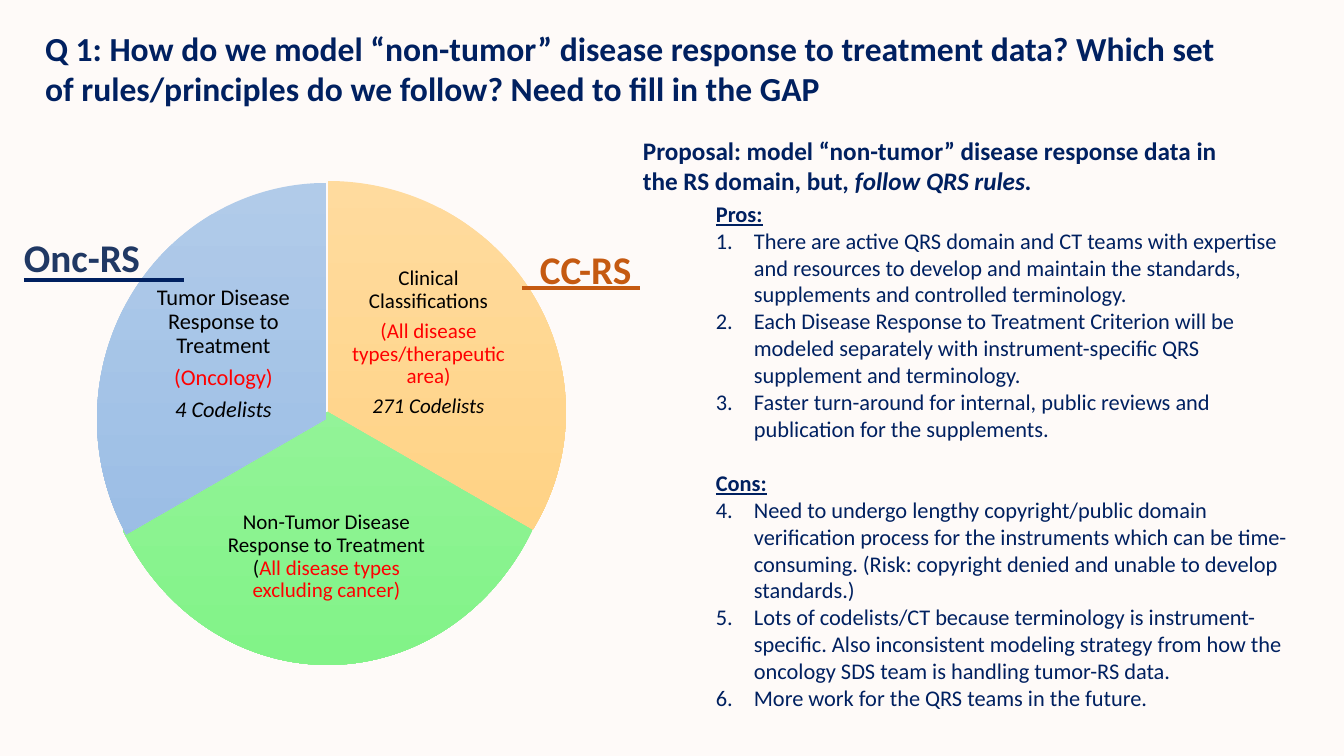
"""Build a slide on modelling non-tumor disease response data."""
from lxml import etree
from pptx import Presentation
from pptx.dml.color import RGBColor
from pptx.enum.shapes import MSO_CONNECTOR, MSO_SHAPE
from pptx.enum.text import MSO_ANCHOR, MSO_AUTO_SIZE, PP_ALIGN
from pptx.oxml.ns import qn
from pptx.util import Pt

PIE = MSO_SHAPE.PIE
LINE = MSO_CONNECTOR.STRAIGHT
TOP, MIDDLE = MSO_ANCHOR.TOP, MSO_ANCHOR.MIDDLE
LEFT, CENTER = PP_ALIGN.LEFT, PP_ALIGN.CENTER
FIXED = MSO_AUTO_SIZE.NONE
SCALE = 12192000 / 1344
FONT = "Calibri"
NAVY, BLACK, RED = "002060", "000000", "FF0000"

PROS = [
    "There are active QRS domain and CT teams with expertise and resources to "
    "develop and maintain the standards, supplements and controlled terminology.",
    "Each Disease Response to Treatment Criterion will be modeled separately "
    "with instrument-specific QRS supplement and terminology.",
    "Faster turn-around for internal, public reviews and publication for the "
    "supplements.",
]
CONS = [
    "Need to undergo lengthy copyright/public domain verification process for "
    "the instruments which can be time-consuming. (Risk: copyright denied and "
    "unable to develop standards.)",
    "Lots of codelists/CT because terminology is instrument-specific. Also "
    "inconsistent modeling strategy from how the oncology SDS team is handling "
    "tumor-RS data.",
    "More work for the QRS teams in the future.",
]
SLICES = [
    ((90, 181, 476, 462), (162, 18), ("FFDB9E", "FFD07C"), (348, 266, 161, 154), 15,
     [[("Clinical Classifications", BLACK, "")],
      [("(All disease types/therapeutic area)", RED, "")],
      [("271 Codelists", BLACK, "i")]]),
    ((96, 159, 463, 506), (18, 90), ("A4F4A9", "82F388"), (222, 479, 209, 156), 15,
     [[("Non-Tumor Disease Response to Treatment (", BLACK, ""),
       ("All disease types excluding cancer)", RED, "")]]),
    ((97, 183, 458, 472), (90, 162), ("B1CBE9", "93B9E4"), (146, 276, 155, 157), 16,
     [[("Tumor Disease Response to Treatment", BLACK, "")],
      [("(Oncology)", RED, "")],
      [("4 Codelists", BLACK, "i")]]),
]


def px(n):
    """Turn pixels into EMU."""
    return round(n * SCALE)


def color(code):
    """Turn a hex string into a colour."""
    return RGBColor.from_string(code)


def add_run(para, text, size, code=NAVY, style=""):
    """Add one run; style letters are b, i and u."""
    run = para.add_run()
    run.text = text
    font = run.font
    font.name, font.size = FONT, Pt(size)
    font.color.rgb = color(code)
    font.bold, font.italic, font.underline = (s in style for s in "biu")


def add_box(slide, box):
    """Add a wrapping text box and return its frame."""
    frame = slide.shapes.add_textbox(*map(px, box)).text_frame
    frame.word_wrap = True
    return frame


def next_para(frame):
    """Return the first paragraph if unused, else a new one."""
    first = frame.paragraphs[0]
    return frame.add_paragraph() if first.runs else first


def add_title(slide, box, text):
    """Place and fill the title."""
    title = slide.shapes.title
    title.left, title.top, title.width, title.height = map(px, box)
    frame = title.text_frame
    frame.word_wrap, frame.auto_size = True, FIXED
    frame.vertical_anchor = TOP
    para = frame.paragraphs[0]
    para.alignment = LEFT
    add_run(para, text, 24, style="b")


def add_slice(slide, box, angles, shades, area, size, paras):
    """Add a pie slice with its centred label."""
    pie = slide.shapes.add_shape(PIE, *map(px, box))
    pie.shadow.inherit = False
    pie.line.fill.background()
    for i, angle in enumerate(angles):
        pie.adjustments[i] = angle
    pie.fill.gradient()
    pie.fill.gradient_angle = 270
    for stop, shade in zip(pie.fill.gradient_stops, shades):
        stop.color.rgb = color(shade)
    frame = add_box(slide, area)
    frame.vertical_anchor = MIDDLE
    frame.margin_left = frame.margin_right = px(2)
    frame.margin_top = frame.margin_bottom = px(2)
    for runs in paras:
        para = next_para(frame)
        para.alignment, para.line_spacing = CENTER, 0.9
        para.space_after = Pt(0.35 * size)
        for text, code, style in runs:
            add_run(para, text, size, code, style)


def add_tag(slide, box, text, code, rule, ink):
    """Add a large tag with a rule under it."""
    add_run(add_box(slide, box).paragraphs[0], text, 28, code, "b")
    left, right, y = map(px, rule)
    line = slide.shapes.add_connector(LINE, left, y, right, y)
    line.line.color.rgb = color(ink)
    line.line.width = Pt(2.25)
    etree.SubElement(line._element.spPr, qn("a:effectLst"))


def add_list(frame, head, items, start, gap):
    """Add a heading and its numbered items."""
    para = next_para(frame)
    para.space_before = Pt(gap)
    add_run(para, head, 16, style="bu")
    for item in items:
        para = next_para(frame)
        props = para._p.get_or_add_pPr()
        props.set("marL", str(px(38)))
        props.set("indent", str(-px(38)))
        etree.SubElement(props, qn("a:buFont"), typeface="+mj-lt")
        etree.SubElement(props, qn("a:buAutoNum"), type="arabicPeriod",
                         startAt=str(start))
        add_run(para, item, 16)


def main():
    """Build and save the slide."""
    deck = Presentation()
    deck.slide_width, deck.slide_height = px(1344), px(756)
    slide = deck.slides.add_slide(deck.slide_layouts[5])
    fill = slide.background.fill
    fill.solid()
    fill.fore_color.rgb = color("FEFAF8")
    add_title(slide, (35, 23, 1196, 92),
              "Q 1: How do we model “non-tumor” disease response to treatment "
              "data? Which set of rules/principles do we follow? Need to fill "
              "in the GAP")
    for part in SLICES:
        add_slice(slide, *part)
    add_tag(slide, (530, 240, 148, 57), "CC-RS", "C55A11", (522, 640, 288), "C55A11")
    add_tag(slide, (14, 228, 152, 57), "Onc-RS", "203864", (24, 184, 280), NAVY)
    frame = add_box(slide, (706, 195, 615, 526))
    add_list(frame, "Pros:", PROS, 1, 0)
    add_list(frame, "Cons:", CONS, 4, 19.5)
    para = add_box(slide, (633, 130, 631, 72)).paragraphs[0]
    add_run(para, "Proposal: model “non-tumor” disease response data in the RS "
            "domain, but, ", 18, style="b")
    add_run(para, "follow QRS rules.", 18, style="bi")
    deck.save("out.pptx")


if __name__ == "__main__":
    main()
